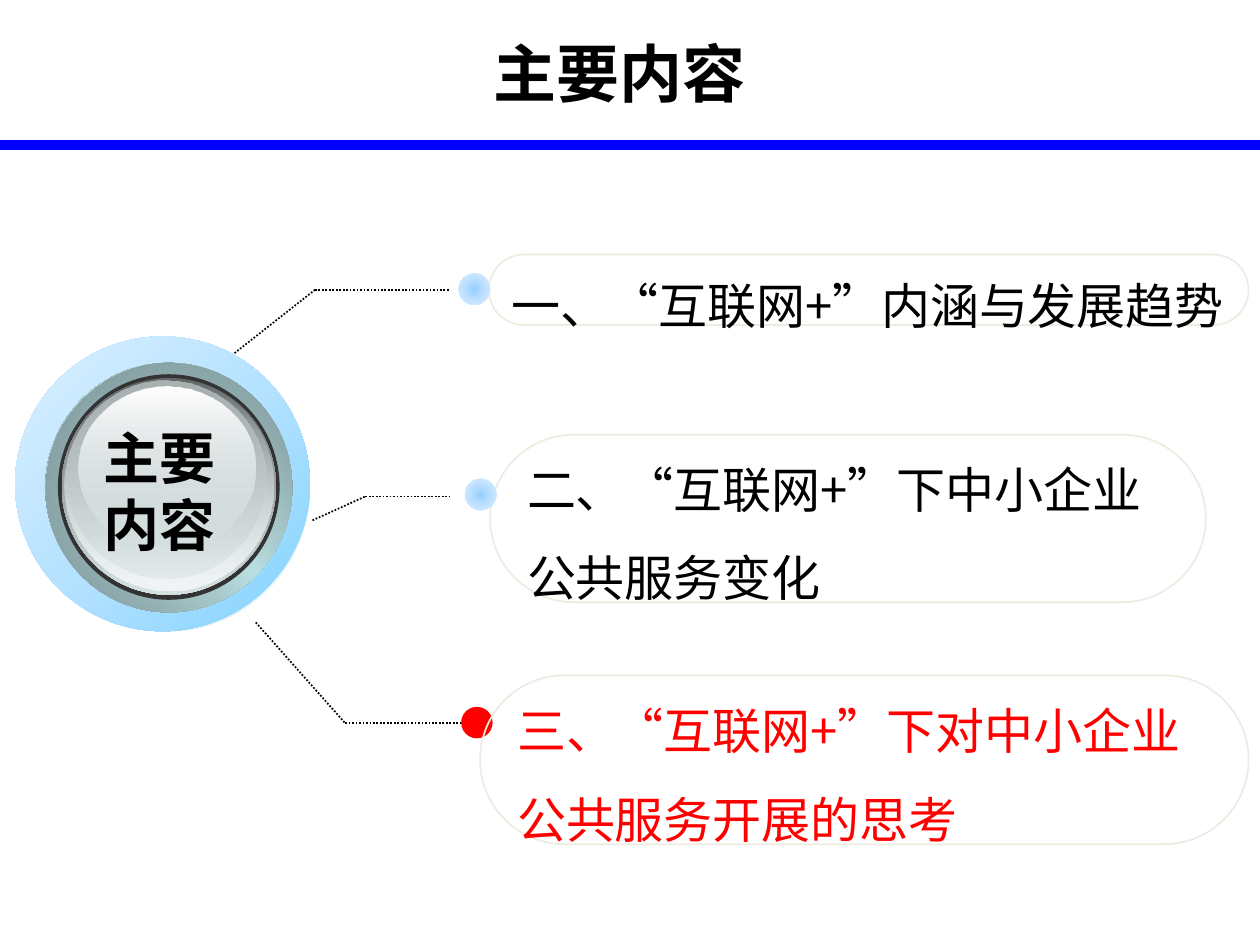
from dataclasses import dataclass
from typing import Optional

from lxml import etree
from pptx import Presentation
from pptx import util as u
from pptx.dml.color import RGBColor
from pptx.enum import dml, shapes, text
from pptx.oxml import ns

FONT = "Noto Sans CJK SC"
BLACK = RGBColor(0x00, 0x00, 0x00)
RED = RGBColor(0xFF, 0x00, 0x00)
BLUE = RGBColor(0x00, 0x00, 0xFF)
CREAM = RGBColor(0xEE, 0xEC, 0xE1)
CHARCOAL = RGBColor(0x33, 0x33, 0x33)
WHITE = RGBColor(0xFF, 0xFF, 0xFF)
AQUA = RGBColor(0xBB, 0xE0, 0xE3)
SLATE = RGBColor(0x65, 0x79, 0x7B)
SILVER = RGBColor(0xD6, 0xE1, 0xE2)
DOT_SIZE = 0.25


@dataclass
class Stop:
    position: int
    color: RGBColor
    alpha: int = 100


@dataclass
class Gradient:
    stops: list[Stop]
    angle: Optional[int] = None  # None means radial from the centre


@dataclass
class Disc:
    box: tuple[float, float, float, float]
    fill: RGBColor | Gradient


@dataclass
class Topic:
    lines: list[str]
    box: tuple[float, float, float, float]
    dot: tuple[float, float]
    leader: list[tuple[float, float]]
    active: bool = False


DOT_GLOW = Gradient([Stop(0, RGBColor(0x96, 0xD0, 0xFF)),
                     Stop(50, RGBColor(0xBF, 0xE1, 0xFF)),
                     Stop(100, RGBColor(0xE0, 0xEF, 0xFF))])

TOPICS = [
    Topic(["一、“互联网+”内涵与发展趋势"], (3.88, 2.02, 6.03, 0.56),
          (3.64, 2.17), [(1.84, 2.82), (2.5, 2.3), (3.56, 2.3)]),
    Topic(["二、“互联网+”下中小企业", "公共服务变化"], (3.89, 3.45, 5.68, 1.33),
          (3.69, 3.8), [(2.48, 4.13), (2.9, 3.94), (3.58, 3.94)]),
    Topic(["三、“互联网+”下对中小企业", "公共服务开展的思考"], (3.81, 5.36, 6.1, 1.34),
          (3.66, 5.61), [(2.03, 4.94), (2.74, 5.74), (3.69, 5.74)], active=True),
]

# Layers of the round button, from back to front
BUTTON = [
    Disc((0.21, 2.73, 2.25, 2.28),
         Gradient([Stop(0, WHITE), Stop(50, AQUA), Stop(100, WHITE)], 45)),
    Disc((0.12, 2.67, 2.34, 2.34),
         Gradient([Stop(0, RGBColor(0x83, 0xD3, 0xFF)), Stop(50, RGBColor(0xB5, 0xE2, 0xFF)),
                   Stop(100, RGBColor(0xDB, 0xF0, 0xFF))], 225)),
    Disc((0.36, 2.88, 1.96, 1.98),
         Gradient([Stop(0, SLATE), Stop(50, AQUA), Stop(100, SLATE)], 315)),
    Disc((0.36, 2.88, 1.96, 1.98),
         Gradient([Stop(0, RGBColor(0x77, 0x8E, 0x90)), Stop(100, AQUA, 0)], 45)),
    Disc((0.46, 2.97, 1.76, 1.79), CHARCOAL),
    Disc((0.49, 3, 1.7, 1.72),
         Gradient([Stop(0, RGBColor(0x63, 0x68, 0x69)), Stop(100, SILVER)], 90)),
    Disc((0.51, 3.01, 1.66, 1.68),
         Gradient([Stop(0, SILVER, 0), Stop(100, RGBColor(0xF1, 0xF5, 0xF5))], 90)),
    Disc((0.53, 3.02, 1.58, 1.57),
         Gradient([Stop(0, RGBColor(0xAA, 0xB2, 0xB3)), Stop(100, SILVER, 48)], 90)),
    Disc((0.62, 3.07, 1.41, 1.28), Gradient([Stop(0, WHITE), Stop(100, SILVER, 38)], 90)),
]


def add_element(parent, tag: str, **attributes):
    values = {name: str(value) for name, value in attributes.items()}
    return etree.SubElement(parent, ns.qn(tag), values)


def apply_gradient(shape, gradient: Gradient) -> None:
    shape.fill.background()
    properties = shape.fill._xPr
    fill = add_element(properties, "a:gradFill", rotWithShape=1)
    properties.replace(properties.find(ns.qn("a:noFill")), fill)
    stop_list = add_element(fill, "a:gsLst")
    for stop in gradient.stops:
        stop_element = add_element(stop_list, "a:gs", pos=stop.position * 1000)
        color = add_element(stop_element, "a:srgbClr", val=stop.color)
        if stop.alpha < 100:
            add_element(color, "a:alpha", val=stop.alpha * 1000)
    if gradient.angle is None:
        radial = add_element(fill, "a:path", path="circle")
        add_element(radial, "a:fillToRect", l=50000, t=50000, r=50000, b=50000)
    else:
        add_element(fill, "a:lin", ang=gradient.angle * 60000, scaled=1)


def add_disc(container, disc: Disc) -> None:
    shape = container.add_shape(shapes.MSO_SHAPE.OVAL, *map(u.Inches, disc.box))
    shape.shadow.inherit = False
    shape.line.fill.background()
    if isinstance(disc.fill, Gradient):
        apply_gradient(shape, disc.fill)
    else:
        shape.fill.solid()
        shape.fill.fore_color.rgb = disc.fill


def add_line(container, start: tuple, end: tuple, color: RGBColor, width: float, dash=None) -> None:
    line = container.add_connector(shapes.MSO_CONNECTOR.STRAIGHT, *map(u.Inches, start + end))
    line.line.color.rgb = color
    line.line.width = u.Pt(width)
    if dash is not None:
        line.line.dash_style = dash
    add_element(line._element.spPr, "a:effectLst")


def write_lines(shape, lines: list[str], size: float, color: RGBColor, bold: bool = False,
                alignment=text.PP_ALIGN.CENTER, spacing: float = 1.0,
                anchor=text.MSO_ANCHOR.MIDDLE, wrap: bool = True) -> None:
    frame = shape.text_frame
    for name, value in {"word_wrap": wrap, "vertical_anchor": anchor}.items():
        setattr(frame, name, value)
    frame.text = "\n".join(lines)
    for paragraph in frame.paragraphs:
        for name, value in {"alignment": alignment, "line_spacing": spacing}.items():
            setattr(paragraph, name, value)
        run = paragraph.runs[0]
        for name, value in {"name": FONT, "size": u.Pt(size), "bold": bold}.items():
            setattr(run.font, name, value)
        run.font.color.rgb = color
        run._r.get_or_add_rPr().set("lang", "zh-CN")
        add_element(run._r.rPr, "a:ea", typeface=FONT)


def add_topic(slide, topic: Topic) -> None:
    leader = slide.shapes.add_group_shape()
    for start, end in zip(topic.leader, topic.leader[1:]):
        add_line(leader.shapes, start, end, BLACK, 1, dml.MSO_LINE.ROUND_DOT)

    dot = Disc((*topic.dot, DOT_SIZE, DOT_SIZE), RED if topic.active else DOT_GLOW)
    if topic.active:  # the active dot sits behind its outline
        add_disc(slide.shapes, dot)
    outline = slide.shapes.add_shape(shapes.MSO_SHAPE.ROUNDED_RECTANGLE,
                                     *map(u.Inches, topic.box))
    outline.adjustments[0] = 0.5
    outline.shadow.inherit = False
    outline.fill.background()
    outline.line.color.rgb = CREAM
    outline.line.width = u.Pt(1)
    write_lines(outline, topic.lines, 28, RED if topic.active else BLACK,
                alignment=text.PP_ALIGN.LEFT, spacing=1.5, wrap=False)
    if not topic.active:
        add_disc(slide.shapes, dot)


def main() -> None:
    presentation = Presentation()
    presentation.slide_width, presentation.slide_height = u.Inches(10), u.Inches(7.5)
    slide = presentation.slides.add_slide(presentation.slide_layouts[6])

    # Title and rule
    add_line(slide.shapes, (0, 1.15), (10, 1.15), BLUE, 6)
    title = slide.shapes.add_textbox(*map(u.Inches, (0.32, 0, 9.19, 1.15)))
    write_lines(title, ["主要内容"], 36, BLACK, bold=True)

    # Topics with their leaders
    for topic in TOPICS:
        add_topic(slide, topic)

    # Round button with its label
    button = slide.shapes.add_group_shape()
    for disc in BUTTON:
        add_disc(button.shapes, disc)
    label = slide.shapes.add_textbox(*map(u.Inches, (0.29, 3.31, 1.95, 0.91)))
    write_lines(label, ["主要", "内容"], 32, BLACK, bold=True, anchor=text.MSO_ANCHOR.TOP)

    presentation.save("out.pptx")


if __name__ == "__main__":
    main()
